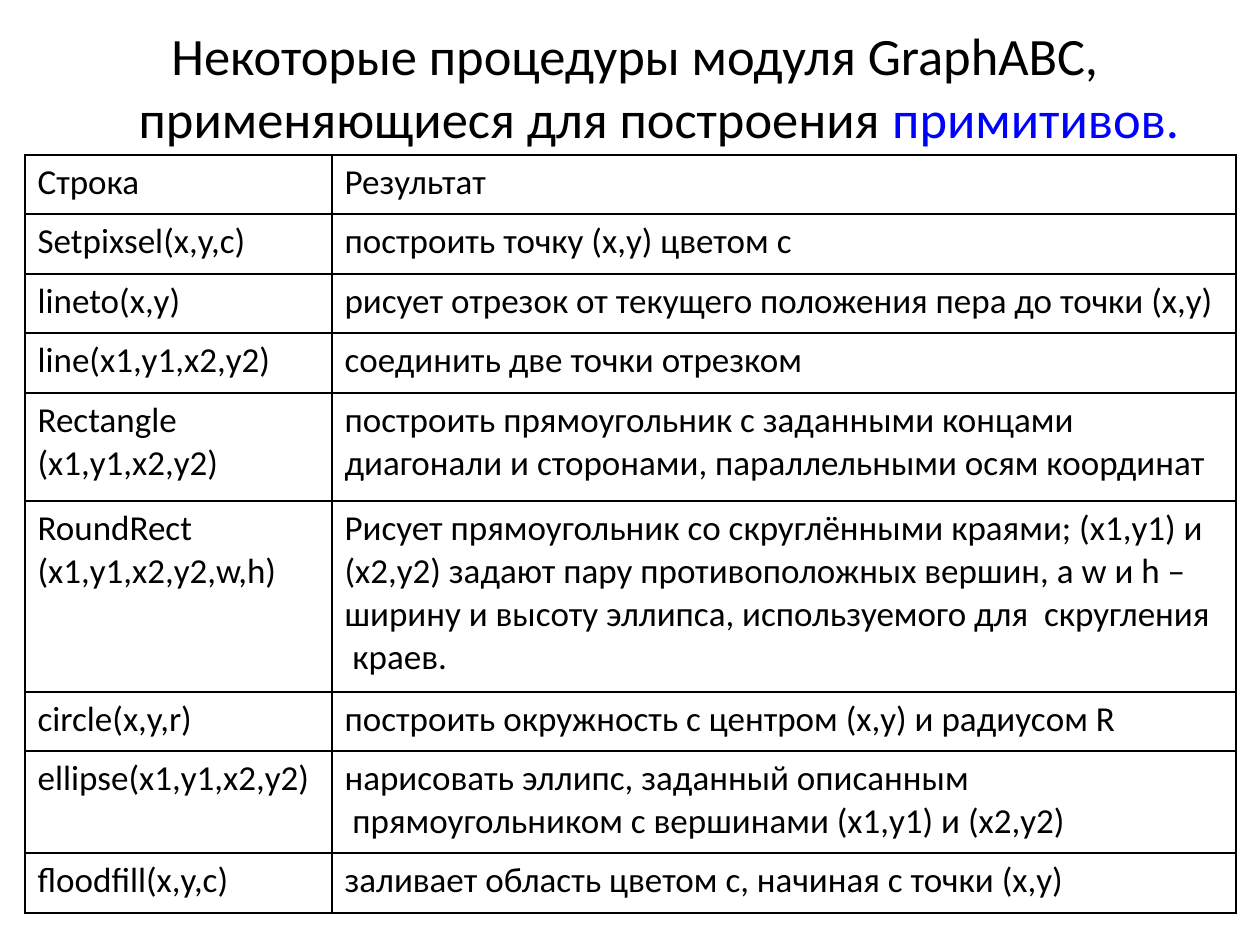
import dataclasses

import lxml.etree
import pptx
import pptx.dml.color
import pptx.enum.text
import pptx.oxml.ns
import pptx.util

PX_PER_INCH = 126
EMU_PER_PX = 914400 / PX_PER_INCH


@dataclasses.dataclass(frozen=True)
class Theme:
    font: str = "Calibri"
    title_size: int = 30
    cell_size: int = 20
    ink: str = "000000"
    accent: str = "0000FF"
    border_width: int = 1


THEME = Theme()

TITLE = [
    ("Некоторые процедуры модуля GraphАВС, применяющиеся для построения ", THEME.ink),
    ("примитивов.", THEME.accent),
]

COLUMN_WIDTHS = [307, 904]

PROCEDURES = [
    (59, "Строка", "Результат"),
    (60, "Setpixsel(x,y,c)", "построить точку (x,y) цветом c"),
    (59, "lineto(x,y)", "рисует отрезок от текущего положения пера до точки (x,y)"),
    (60, "line(x1,y1,x2,y2)", "соединить две точки отрезком"),
    (108, "Rectangle\n(x1,y1,x2,y2)",
     "построить прямоугольник с заданными концами диагонали "
     "и сторонами, параллельными осям координат"),
    (191, "RoundRect\n(x1,y1,x2,y2,w,h)",
     "Рисует прямоугольник со скруглёнными краями; (x1,y1) и (x2,y2) "
     "задают пару противоположных вершин, а w и h – ширину и высоту "
     "эллипса, используемого для  скругления   краев."),
    (59, "circle(x,y,r)", "построить окружность с центром (x,y) и радиусом R"),
    (102, "ellipse(x1,y1,x2,y2)",
     "нарисовать эллипс, заданный описанным\n"
     " прямоугольником с вершинами (x1,y1) и (x2,y2)"),
    (60, "floodfill(x,y,c)", "заливает область цветом c, начиная с точки (x,y)"),
]


def px(length):
    return pptx.util.Emu(round(length * EMU_PER_PX))


def write_text(frame, paragraphs, *, size, align=None, space_before=0, hanging=0):
    for index, runs in enumerate(paragraphs):
        paragraph = frame.paragraphs[0] if index == 0 else frame.add_paragraph()
        paragraph.alignment = align
        paragraph.space_before = pptx.util.Pt(space_before)
        if hanging:
            properties = paragraph._p.get_or_add_pPr()
            properties.set("marL", str(px(hanging)))
            properties.set("indent", str(-px(hanging)))
        for words, color in runs:
            run = paragraph.add_run()
            run.text = words
            run.font.name = THEME.font
            run.font.size = pptx.util.Pt(size)
            run.font.color.rgb = pptx.dml.color.RGBColor.from_string(color)


def add_title(slide):
    title = slide.shapes.title
    title.left, title.top, title.width, title.height = map(px, (54, 16, 1162, 139))
    frame = title.text_frame
    frame.word_wrap = True
    frame.auto_size = pptx.enum.text.MSO_AUTO_SIZE.NONE
    frame.vertical_anchor = pptx.enum.text.MSO_ANCHOR.MIDDLE
    write_text(frame, [TITLE], size=THEME.title_size,
               align=pptx.enum.text.PP_ALIGN.CENTER, space_before=6, hanging=48)


def outline_cell(cell):
    qn = pptx.oxml.ns.qn
    properties = cell._tc.get_or_add_tcPr()
    for position, side in enumerate(("a:lnL", "a:lnR", "a:lnT", "a:lnB")):
        border = lxml.etree.Element(qn(side), w=str(pptx.util.Pt(THEME.border_width)))
        fill = lxml.etree.SubElement(border, qn("a:solidFill"))
        lxml.etree.SubElement(fill, qn("a:srgbClr"), val=THEME.ink)
        properties.insert(position, border)


def add_procedure_table(slide):
    heights = [height for height, *_ in PROCEDURES]
    table = slide.shapes.add_table(
        len(PROCEDURES), len(COLUMN_WIDTHS), px(25), px(155),
        px(sum(COLUMN_WIDTHS)), px(sum(heights))).table
    table.first_row = False
    table.horz_banding = False
    for column, width in zip(table.columns, COLUMN_WIDTHS):
        column.width = px(width)
    for row, (height, *entries) in zip(table.rows, PROCEDURES):
        row.height = px(height)
        for cell, entry in zip(row.cells, entries):
            cell.fill.background()
            outline_cell(cell)
            lines = [[(line, THEME.ink)] for line in entry.split("\n")]
            write_text(cell.text_frame, lines, size=THEME.cell_size)


def main():
    deck = pptx.Presentation()
    deck.slide_width = px(10 * PX_PER_INCH)
    deck.slide_height = px(7.5 * PX_PER_INCH)
    slide = deck.slides.add_slide(deck.slide_layouts.get_by_name("Title Only"))
    add_title(slide)
    add_procedure_table(slide)
    deck.save("out.pptx")


if __name__ == "__main__":
    main()
